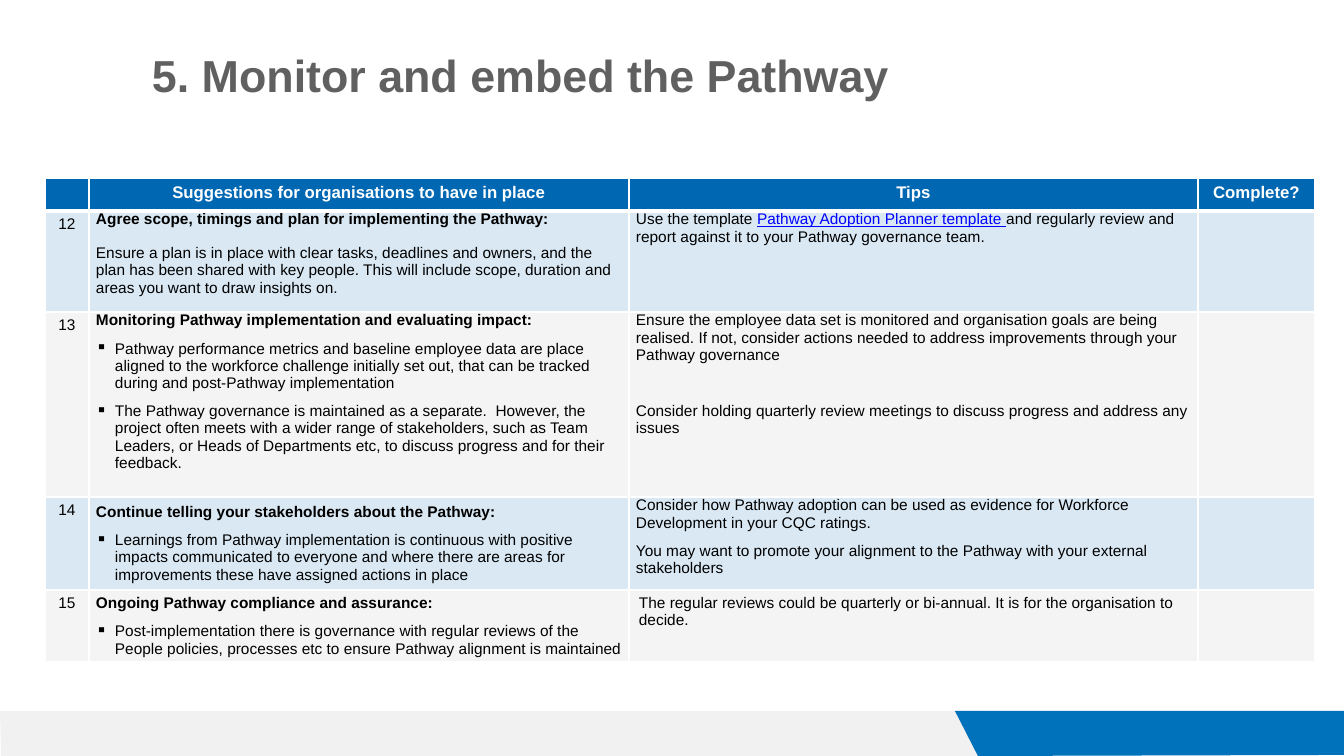
from dataclasses import dataclass

from lxml.etree import SubElement
from pptx import Presentation
from pptx.dml.color import RGBColor
from pptx.enum.text import MSO_ANCHOR as Anchor, PP_ALIGN as Align
from pptx.oxml.ns import qn
from pptx.util import Pt

EMU_PER_PX = 914400 / 100.8


def px(length: int) -> int:
    return round(length * EMU_PER_PX)


@dataclass(frozen=True)
class Theme:
    font: str = "Arial"
    title: str = "606060"
    header: str = "0068B3"
    band: str = "CACACA"
    accent: str = "0071BB"
    text: str = "000000"
    link: str = "0000FF"
    white: str = "FFFFFF"
    title_size: int = 32
    header_size: int = 12
    body_size: int = 11


THEME = Theme()


@dataclass(frozen=True)
class Span:
    text: str
    color: str = THEME.text
    size: int = THEME.body_size
    bold: bool = False
    underline: bool = False


@dataclass(frozen=True)
class Para:
    spans: tuple[Span, ...]
    before: int = 4
    after: int = 4
    bullet: bool = False
    align: Align = Align.LEFT


@dataclass(frozen=True)
class CellText:
    paras: tuple[Para, ...] = ()
    inset_x: int = 7
    inset_y: int = 0
    anchor: Anchor = Anchor.TOP


@dataclass(frozen=True)
class FooterBand:
    points: tuple[tuple[int, int], ...]
    color: str
    opacity: int = 100


# Content builders
def plain(text: str, before: int = 4) -> Para:
    return Para((Span(text),), before)


def heading(text: str, after: int = 4) -> Para:
    return Para((Span(text, bold=True),), after=after)


def bullet(text: str) -> Para:
    return Para((Span(text),), bullet=True)


def centred(span: Span) -> CellText:
    return CellText((Para((span,), 0, 0, align=Align.CENTER),), 10, 5)


def header(text: str) -> CellText:
    return centred(Span(text, THEME.white, THEME.header_size, True))


FOOTER = (
    FooterBand(((0, 711), (984, 711), (1007, 756), (1, 756)), THEME.band, 25),
    FooterBand(((955, 711), (1344, 711), (1344, 755), (978, 756)), THEME.accent),
)
COLUMNS = (44, 540, 569, 117)
ROWS = (33, 101, 185, 93, 72)
BLANK = CellText()
GRID = (
    (BLANK, header("Suggestions for organisations to have in place"), header("Tips"), header("Complete?")),
    (
        centred(Span("12")),
        CellText((
            heading("Agree scope, timings and plan for implementing the Pathway:", after=0),
            plain("Ensure a plan is in place with clear tasks, deadlines and owners, and the plan has been "
                  "shared with key people. This will include scope, duration and areas you want to draw "
                  "insights on.", before=12),
        )),
        CellText((Para((
            Span("Use the template "),
            Span("Pathway Adoption Planner template ", THEME.link, underline=True),
            Span("and regularly review and report against it to your Pathway governance team."),
        )),)),
        BLANK,
    ),
    (
        centred(Span("13")),
        CellText((
            heading("Monitoring Pathway implementation and evaluating impact:"),
            bullet("Pathway performance metrics and baseline employee data are place aligned to the workforce "
                   "challenge initially set out, that can be tracked during and post-Pathway implementation"),
            bullet("The Pathway governance is maintained as a separate.  However, the project often meets with "
                   "a wider range of stakeholders, such as Team Leaders, or Heads of Departments etc, to "
                   "discuss progress and for their feedback."),
        )),
        CellText((
            plain("Ensure the employee data set is monitored and organisation goals are being realised. If not, "
                  "consider actions needed to address improvements through your Pathway governance"),
            plain("Consider holding quarterly review meetings to discuss progress and address any issues",
                  before=24),
        )),
        BLANK,
    ),
    (
        centred(Span("14")),
        CellText((
            heading("Continue telling your stakeholders about the Pathway:"),
            bullet("Learnings from Pathway implementation is continuous with positive impacts communicated to "
                   "everyone and where there are areas for improvements these have assigned actions in place"),
        ), anchor=Anchor.MIDDLE),
        CellText((
            plain("Consider how Pathway adoption can be used as evidence for Workforce Development in your "
                  "CQC ratings."),
            plain("You may want to promote your alignment to the Pathway with your external stakeholders"),
        )),
        BLANK,
    ),
    (
        centred(Span("15")),
        CellText((
            heading("Ongoing Pathway compliance and assurance:"),
            bullet("Post-implementation there is governance with regular reviews of the People policies, "
                   "processes etc to ensure Pathway alignment is maintained"),
        ), anchor=Anchor.MIDDLE),
        CellText((plain("The regular reviews could be quarterly or bi-annual. It is for the organisation "
                        "to decide."),), 10, 5),
        BLANK,
    ),
)


# Drawing
def paint(fill, color: str, opacity: int, parent) -> None:
    fill.solid()
    fill.fore_color.rgb = RGBColor.from_string(color)
    if opacity < 100:
        swatch = parent.find(qn("a:solidFill")).find(qn("a:srgbClr"))
        SubElement(swatch, qn("a:alpha"), val=str(opacity * 1000))


def add_span(paragraph, span: Span) -> None:
    run = paragraph.add_run()
    run.text = span.text
    font = run.font
    font.name, font.size, font.bold = THEME.font, Pt(span.size), span.bold
    font.underline = span.underline
    font.color.rgb = RGBColor.from_string(span.color)


def write_paras(frame, paras: tuple[Para, ...]) -> None:
    for index, para in enumerate(paras):
        paragraph = frame.add_paragraph() if index else frame.paragraphs[0]
        paragraph.alignment = para.align
        paragraph.space_before = Pt(para.before if index else 0)
        paragraph.space_after = Pt(para.after)
        if para.bullet:
            properties = paragraph._p.get_or_add_pPr()
            properties.set("marL", str(px(19)))
            properties.set("indent", str(-px(19)))
            SubElement(properties, qn("a:buChar"), char="▪")
        for span in para.spans:
            add_span(paragraph, span)


def add_footer_band(slide, band: FooterBand) -> None:
    start, *rest = band.points
    builder = slide.shapes.build_freeform(*start, scale=EMU_PER_PX)
    builder.add_line_segments(rest, close=True)
    shape = builder.convert_to_shape()
    shape.shadow.inherit = False
    shape.line.fill.background()
    paint(shape.fill, band.color, band.opacity, shape._element.spPr)


def style_cell(cell, row: int) -> None:
    properties = cell._tc.get_or_add_tcPr()
    widths = {"L": 1, "R": 1, "T": 3 if row == 1 else 1, "B": 3 if row == 0 else 1}
    for side, width in widths.items():
        line = SubElement(properties, qn(f"a:ln{side}"), w=str(Pt(width)))
        SubElement(SubElement(line, qn("a:solidFill")), qn("a:srgbClr"), val=THEME.white)
    color, opacity = (THEME.header, 15) if row % 2 else (THEME.band, 20)
    if row == 0:
        color, opacity = THEME.header, 100
    paint(cell.fill, color, opacity, properties)


def fill_cell(cell, content: CellText) -> None:
    cell.margin_left = cell.margin_right = px(content.inset_x)
    cell.margin_top = cell.margin_bottom = px(content.inset_y)
    cell.vertical_anchor = content.anchor
    if content.paras:
        write_paras(cell.text_frame, content.paras)
    else:
        SubElement(cell.text_frame.paragraphs[0]._p, qn("a:endParaRPr"), sz=str(THEME.body_size * 100))


def add_checklist(slide) -> None:
    frame = slide.shapes.add_table(len(ROWS), len(COLUMNS), px(45), px(178), px(sum(COLUMNS)), px(sum(ROWS)))
    table = frame.table
    table.first_row = table.horz_banding = False
    for column, width in zip(table.columns, COLUMNS):
        column.width = px(width)
    for row, height in zip(table.rows, ROWS):
        row.height = px(height)
    for row_index, contents in enumerate(GRID):
        for column_index, content in enumerate(contents):
            cell = table.cell(row_index, column_index)
            style_cell(cell, row_index)
            fill_cell(cell, content)


def add_title(slide) -> None:
    title = slide.shapes.title
    title.left, title.top, title.width, title.height = px(142), px(40), px(865), px(78)
    frame = title.text_frame
    frame.word_wrap = True
    frame.vertical_anchor = Anchor.MIDDLE
    frame.margin_left = frame.margin_right = px(10)
    frame.margin_top, frame.margin_bottom = px(5), px(13)
    span = Span("5. Monitor and embed the Pathway", THEME.title, THEME.title_size, True)
    write_paras(frame, (Para((span,), 0, 0),))


def main() -> None:
    presentation = Presentation()
    presentation.slide_width, presentation.slide_height = px(1344), px(756)
    slide = presentation.slides.add_slide(presentation.slide_layouts[5])
    for band in FOOTER:
        add_footer_band(slide, band)
    add_title(slide)
    add_checklist(slide)
    presentation.save("out.pptx")


if __name__ == "__main__":
    main()
